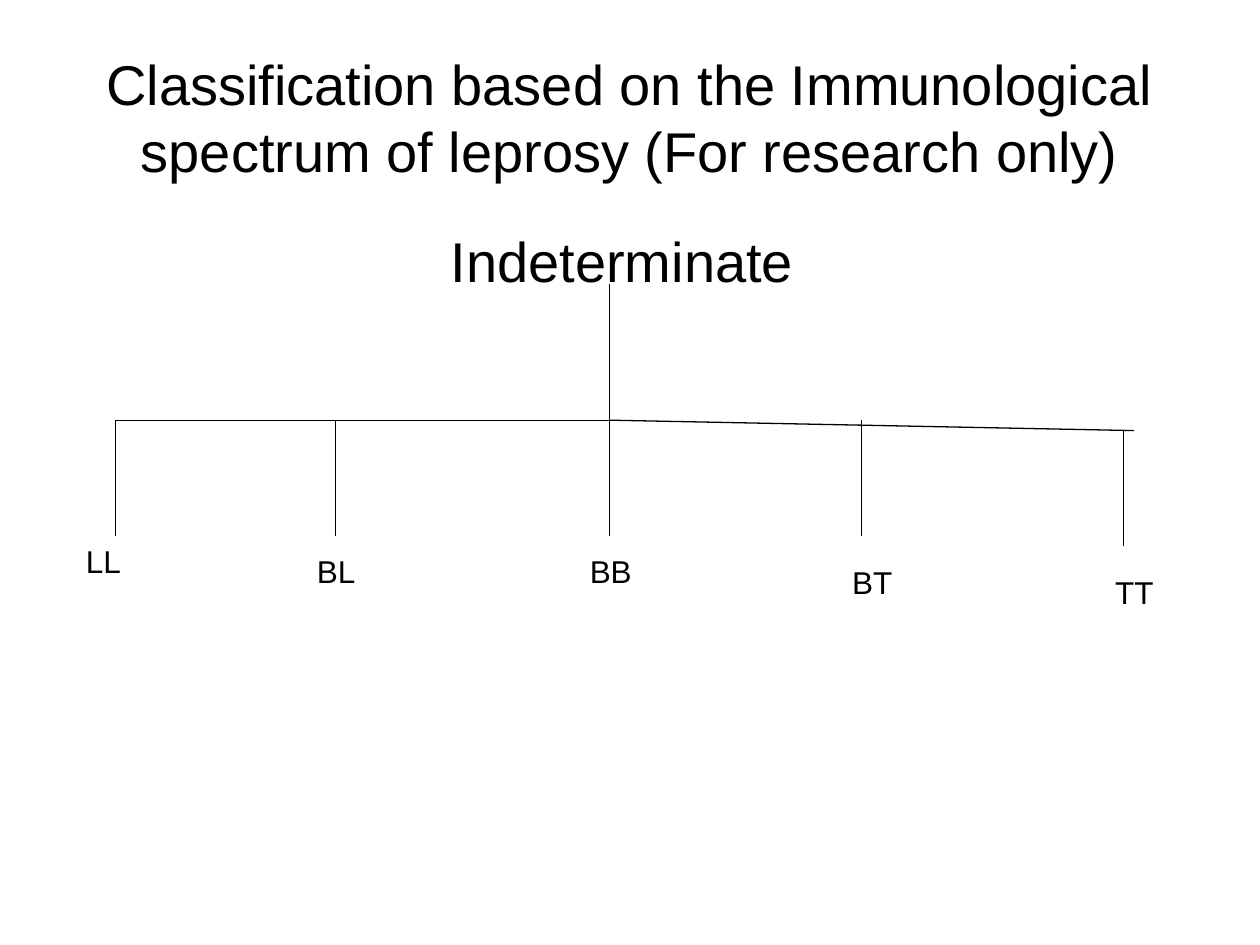
import pptx
import pptx.util
import pptx.dml.color
import pptx.enum.shapes
import pptx.enum.text
import pptx.oxml.ns
from pptx.util import Cm

INK = "000000"
TITLE = "Classification based on the Immunological spectrum of leprosy (For research only)"
ROOT = "Indeterminate "
# name, stem x, stem top, stem bottom, label left, label top, label width (cm)
CLASSES = [
    ("LL", 2.33, 8.47, 10.8, 1.48, 10.8, 2.33),
    ("BL", 6.77, 8.47, 10.8, 6.14, 11.01, 2.54),
    ("BB", 12.28, 8.47, 10.8, 11.64, 11.01, 1.48),
    ("BT", 17.36, 8.47, 10.8, 16.93, 11.22, 2.33),
    ("TT", 22.65, 8.68, 11.01, 22.23, 11.43, 2.54),
]
TRUNK_TOP = (12.28, 5.72)
HUB = (12.28, 8.47)
BRANCH_ENDS = [(2.33, 8.47), (22.86, 8.68)]

deck = pptx.Presentation()
deck.slide_width, deck.slide_height = Cm(25.4), Cm(19.05)
slide = deck.slides.add_slide(deck.slide_layouts[6])


def color(hex_code):
    return pptx.dml.color.RGBColor.from_string(hex_code)


def add_text(text, left, top, width, height, size, centred=False, middle=False, before=0):
    box = slide.shapes.add_textbox(Cm(left), Cm(top), Cm(width), Cm(height))
    frame = box.text_frame
    frame.word_wrap = True
    if middle:
        frame.vertical_anchor = pptx.enum.text.MSO_ANCHOR.MIDDLE
    paragraph = frame.paragraphs[0]
    paragraph.space_before = pptx.util.Pt(before)
    if centred:
        paragraph.alignment = pptx.enum.text.PP_ALIGN.CENTER
    run = paragraph.add_run()
    run.text = text
    run.font.name = "Arial"
    run.font.size = pptx.util.Pt(size)
    run.font.color.rgb = color(INK)


def add_line(start, end):
    line = slide.shapes.add_connector(
        pptx.enum.shapes.MSO_CONNECTOR.STRAIGHT, *map(Cm, start + end))
    line.line.color.rgb = color(INK)
    line.line.width = pptx.util.Pt(0.75)
    properties = line._element.spPr
    properties.append(properties.makeelement(pptx.oxml.ns.qn("a:effectLst"), {}))


add_text(TITLE, 1.27, 0.76, 22.86, 3.18, 32, centred=True, middle=True)
add_text(ROOT, 1.27, 4.45, 22.86, 12.57, 32, centred=True, before=3)

add_line(TRUNK_TOP, HUB)
for branch_end in BRANCH_ENDS:
    add_line(HUB, branch_end)
for name, x, stem_top, stem_bottom, left, top, width in CLASSES:
    add_line((x, stem_top), (x, stem_bottom))
    add_text(name, left, top, width, 1.02, 18)

deck.save("out.pptx")
